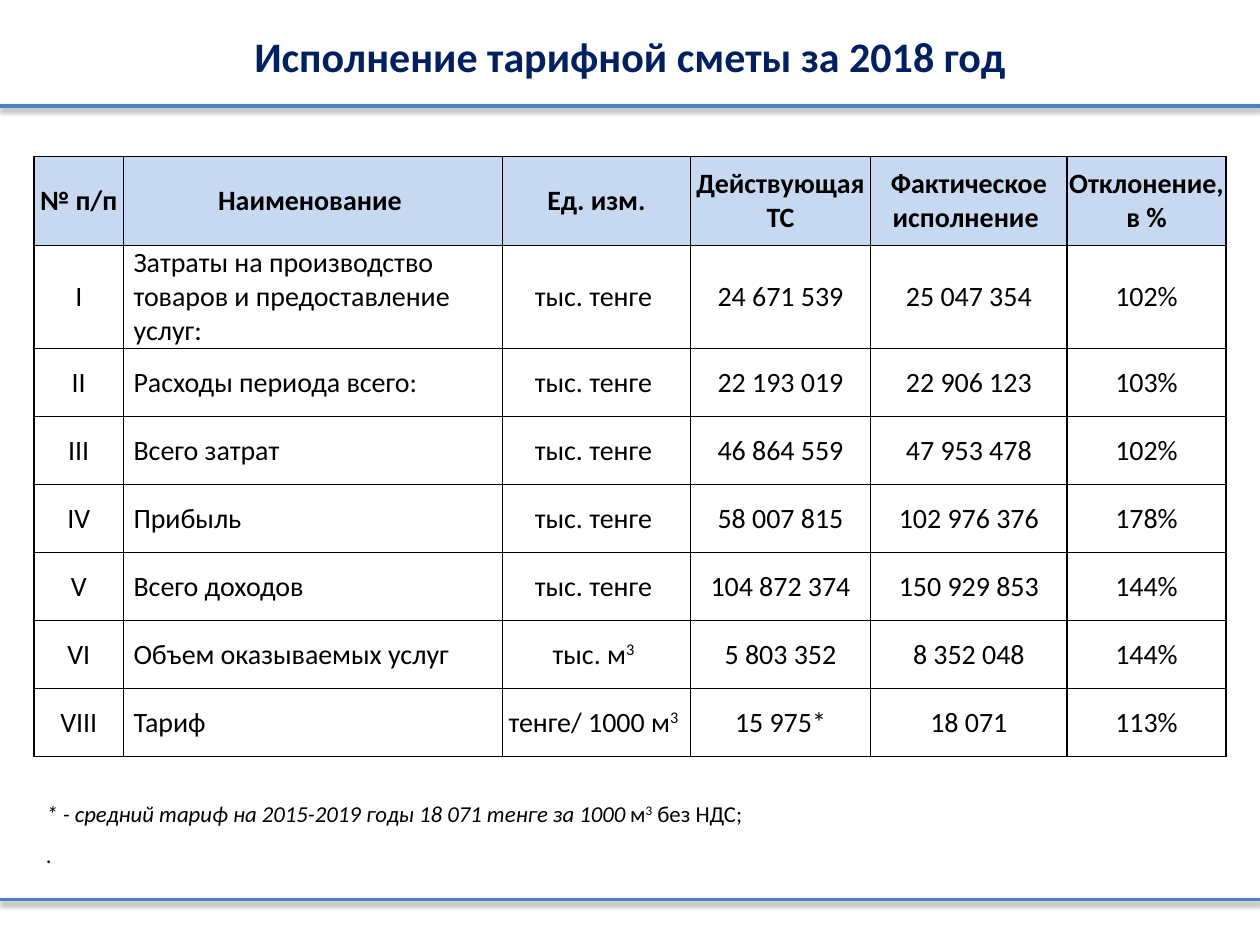
from lxml.etree import SubElement
from pptx import Presentation
from pptx.dml.color import RGBColor
from pptx.enum.shapes import MSO_CONNECTOR as Connector
from pptx.enum.text import MSO_ANCHOR as Anchor, PP_ALIGN as Align
from pptx.oxml.ns import qn
from pptx.util import Inches, Pt

NAVY = RGBColor(0x00, 0x20, 0x60)
BLUE = RGBColor(0x4F, 0x81, 0xBD)
PALE = RGBColor(0xC6, 0xD9, 0xF1)
BLACK = RGBColor(0, 0, 0)

COLUMNS = [0.71, 3.01, 1.49, 1.43, 1.56, 1.26]
ROWS = [0.71, 0.7] + [0.54] * 6
HEADER = ["№ п/п", "Наименование ", "Ед. изм.", "Действующая ТС",
          "Фактическое исполнение ", "Отклонение, в %"]
MONEY = "тыс. тенге "
RECORDS = [
    ["I", "Затраты на производство товаров и предоставление услуг:", MONEY,
     "24 671 539", "25 047 354", "102%"],
    ["II", "Расходы периода всего:", MONEY, "22 193 019", "22 906 123", "103%"],
    ["III", "Всего затрат", MONEY, "46 864 559", "47 953 478", "102%"],
    ["IV", "Прибыль", MONEY, "58 007 815", "102 976 376", "178%"],
    ["V", "Всего доходов", MONEY, "104 872 374", "150 929 853", "144%"],
    ["VI", "Объем оказываемых услуг", "тыс. м^3 ", "5 803 352", "8 352 048", "144%"],
    ["VIII", "Тариф", "тенге/ 1000 м^3 ", "15 975*", "18 071", "113%"],
]
NAME_COLUMN = 1


def write(para, text, size=16, color=BLACK, bold=False, italic=False,
          align=Align.CENTER, spacing=None):
    """Add text to a paragraph; the character after ^ is raised."""
    para.alignment = align
    if spacing:
        para.line_spacing = spacing
    plain, _, rest = text.partition("^")
    for part, raised in ((plain, False), (rest[:1], True), (rest[1:], False)):
        if not part:
            continue
        span = para.add_run()
        span.text = part
        font = span.font
        font.name, font.size = "Calibri", Pt(size)
        font.bold, font.italic = bold, italic
        font.color.rgb = color
        if raised:
            span._r.get_or_add_rPr().set("baseline", "30000")


class Sheet:
    """Style and current slide; places are shares of the slide's size."""

    def __init__(self, deck):
        self.width, self.height = deck.slide_width, deck.slide_height
        self.page = deck.slides.add_slide(deck.slide_layouts[5])

    def place(self, x, y, w, h):
        return (int(x * self.width), int(y * self.height),
                int(w * self.width), int(h * self.height))

    def title(self, text, *share):
        box = self.page.shapes.title
        box.left, box.top, box.width, box.height = self.place(*share)
        box.text_frame.vertical_anchor = Anchor.MIDDLE
        write(box.text_frame.paragraphs[0], text, size=24, color=NAVY, bold=True)

    def rule(self, y):
        """Full-width line with a soft shadow below it."""
        left, top, width, _ = self.place(0, y, 1, 0)
        line = self.page.shapes.add_connector(
            Connector.STRAIGHT, left, top, left + width, top)
        line.line.color.rgb, line.line.width = BLUE, Pt(2)
        effects = SubElement(line._element.spPr, qn("a:effectLst"))
        shadow = SubElement(effects, qn("a:outerShdw"), blurRad="40000",
                            dist="20000", dir="5400000", rotWithShape="0")
        shade = SubElement(shadow, qn("a:srgbClr"), val=str(BLACK))
        SubElement(shade, qn("a:alpha"), val="38000")

    def border(self, cell):
        props = cell._tc.get_or_add_tcPr()
        for side in ("L", "R", "T", "B"):
            edge = SubElement(props, qn(f"a:ln{side}"), w=str(Pt(1)))
            fill = SubElement(edge, qn("a:solidFill"))
            SubElement(fill, qn("a:srgbClr"), val=str(BLACK))

    def cell(self, cell, text, header, named):
        cell.margin_left = Inches(0.08 if named else 0)
        cell.margin_right = cell.margin_top = cell.margin_bottom = 0
        cell.vertical_anchor = Anchor.MIDDLE
        self.border(cell)
        if header:
            cell.fill.solid()
            cell.fill.fore_color.rgb = PALE
        else:
            cell.fill.background()
        write(cell.text_frame.paragraphs[0], text, bold=header,
              align=Align.LEFT if named else Align.CENTER)

    def table(self, records, *share):
        table = self.page.shapes.add_table(
            len(ROWS), len(COLUMNS), *self.place(*share)).table
        table.horz_banding = False
        for column, width in zip(table.columns, COLUMNS):
            column.width = Inches(width)
        for row, height in zip(table.rows, ROWS):
            row.height = Inches(height)
        for r, record in enumerate(records):
            for c, text in enumerate(record):
                self.cell(table.cell(r, c), text, header=r == 0,
                          named=r > 0 and c == NAME_COLUMN)

    def note(self, lines, *share):
        """Each line is a list of (text, italic) parts."""
        frame = self.page.shapes.add_textbox(*self.place(*share)).text_frame
        frame.word_wrap = True
        for number, parts in enumerate(lines):
            para = frame.add_paragraph() if number else frame.paragraphs[0]
            for text, italic in parts:
                write(para, text, size=13, italic=italic,
                      align=Align.JUSTIFY, spacing=1.5)


def main():
    deck = Presentation()
    deck.slide_width, deck.slide_height = Inches(10), Inches(7.5)
    sheet = Sheet(deck)

    # Heading and the two rules
    sheet.title("Исполнение тарифной сметы за 2018 год", 0, 0.09 / 7.5, 1, 0.71 / 7.5)
    for y in (0.84, 7.14):
        sheet.rule(y / 7.5)

    # Tariff estimate
    sheet.table([HEADER] + RECORDS, 0.027, 1.24 / 7.5, 0.946, 4.55 / 7.5)

    # Footnote
    sheet.note([
        [("* - средний тариф на 2015-2019 годы 18 071 тенге за 1000 ", True),
         ("м^3 без НДС;", False)],
        [(".", True)],
    ], 0.027, 6.19 / 7.5, 0.953, 0.08)

    deck.save("out.pptx")


if __name__ == "__main__":
    main()
